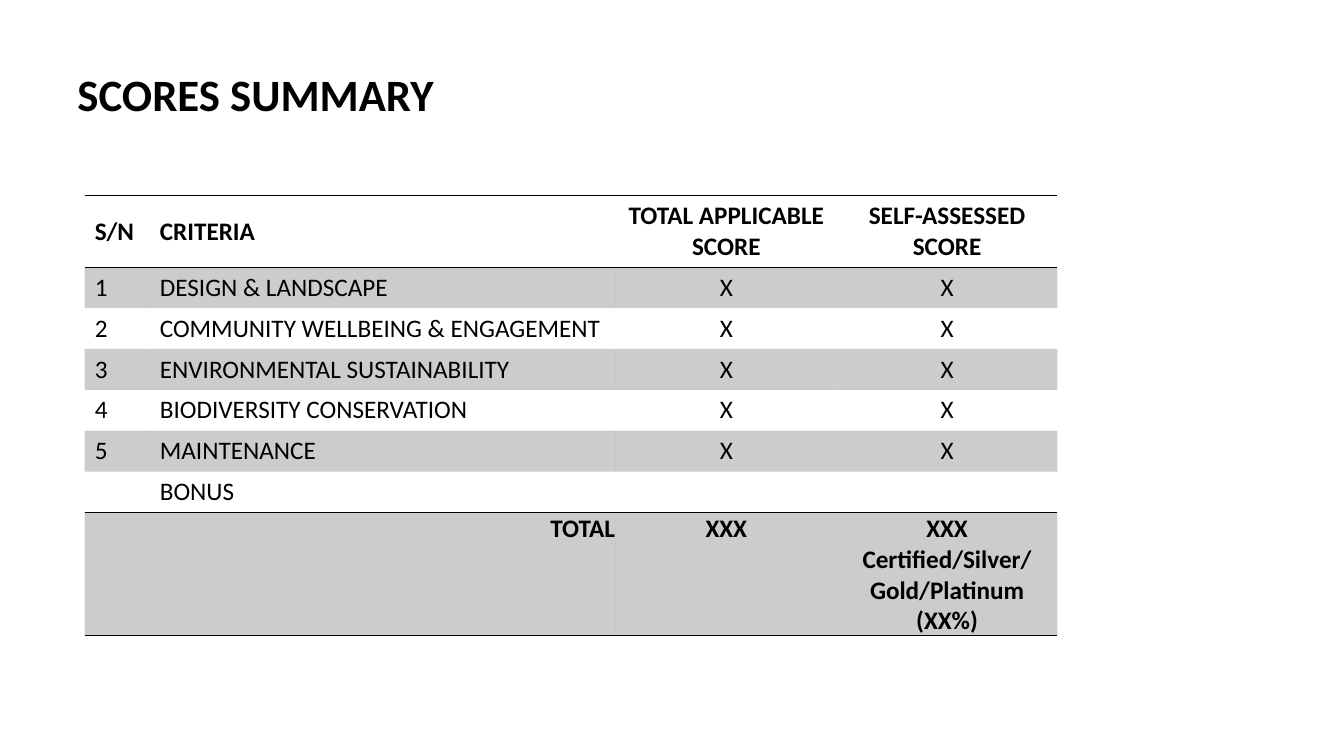
from dataclasses import dataclass

from lxml import etree
from pptx import Presentation
from pptx import util as u
from pptx.dml.color import RGBColor
from pptx.enum import text
from pptx.oxml import ns

Pt = u.Pt
LEFT, CENTER, RIGHT = text.PP_ALIGN.LEFT, text.PP_ALIGN.CENTER, text.PP_ALIGN.RIGHT
TOP, MIDDLE, BOTTOM = (text.MSO_ANCHOR.TOP, text.MSO_ANCHOR.MIDDLE,
                       text.MSO_ANCHOR.BOTTOM)


@dataclass(frozen=True)
class Theme:
    """Colours, type sizes and line widths of the slide."""
    ink: str = "000000"
    band_opacity: int = 20
    font: str = "Calibri"
    title_size: int = 32
    table_size: int = 18
    rule_width: int = 1
    plain_table: str = "{2D5ABB26-0587-4C30-8999-92F81FD0307C}"


THEME = Theme()
HEADINGS = ["S/N", "CRITERIA", "TOTAL APPLICABLE SCORE", "SELF-ASSESSED SCORE"]
CRITERIA = ["DESIGN & LANDSCAPE", "COMMUNITY WELLBEING & ENGAGEMENT",
            "ENVIRONMENTAL SUSTAINABILITY", "BIODIVERSITY CONSERVATION",
            "MAINTENANCE"]
BONUS = ["", "BONUS", "", ""]
TOTALS = ["", "TOTAL", "XXX", "XXX\nCertified/Silver/Gold/Platinum (XX%)"]
COLUMN_WIDTHS = [46.5, 333, 157.7, 157.7]
HEADER_HEIGHT, ROW_HEIGHT, TOTAL_HEIGHT = 51.2, 29.2, 88


def write(frame, content, size, bold, align=LEFT):
    """Fill a text frame, one paragraph per line of content."""
    frame.word_wrap = True
    frame.text = content
    for paragraph in frame.paragraphs:
        paragraph.alignment = align
        font = paragraph.font
        font.name, font.size, font.bold = THEME.font, Pt(size), bold
        font.color.rgb = RGBColor.from_string(THEME.ink)


def rule(cell, *sides):
    """Draw lines along the given sides (T, B) of an unfilled cell."""
    properties = cell._tc.get_or_add_tcPr()
    for side in sides:
        line = etree.SubElement(properties, ns.qn(f"a:ln{side}"),
                                w=str(Pt(THEME.rule_width)))
        fill = etree.SubElement(line, ns.qn("a:solidFill"))
        etree.SubElement(fill, ns.qn("a:srgbClr"), val=THEME.ink)


def shade(cell, banded):
    """Give a cell the translucent band, or leave it clear."""
    if not banded:
        cell.fill.background()
        return
    cell.fill.solid()
    cell.fill.fore_color.rgb = RGBColor.from_string(THEME.ink)
    band = cell._tc.tcPr.find(f"{ns.qn('a:solidFill')}/{ns.qn('a:srgbClr')}")
    etree.SubElement(band, ns.qn("a:alpha"), val=str(THEME.band_opacity * 1000))


def add_title(slide, left, top, width, height):
    """Place the slide title in its box."""
    title = slide.shapes.add_textbox(Pt(left), Pt(top), Pt(width), Pt(height))
    title.text_frame.vertical_anchor = MIDDLE
    write(title.text_frame, "SCORES SUMMARY", THEME.title_size, True)


def add_scores(slide, left, top):
    """Place the table of criteria, scores and totals."""
    scored = [[str(n), name, "X", "X"] for n, name in enumerate(CRITERIA, 1)]
    rows = [HEADINGS, *scored, BONUS, TOTALS]
    last = len(rows) - 1
    heights = [HEADER_HEIGHT, *[ROW_HEIGHT] * (last - 1), TOTAL_HEIGHT]
    frame = slide.shapes.add_table(
        len(rows), len(HEADINGS), Pt(left), Pt(top),
        Pt(sum(COLUMN_WIDTHS)), Pt(sum(heights)))
    scores = frame.table
    scores.first_row = scores.horz_banding = False
    scores._tbl.tblPr.find(ns.qn("a:tableStyleId")).text = THEME.plain_table
    for column, width in zip(scores.columns, COLUMN_WIDTHS):
        column.width = Pt(width)
    ruled = {0: "TB", last - 1: "B", last: "TB"}
    for r, (row, height) in enumerate(zip(rows, heights)):
        scores.rows[r].height = Pt(height)
        for c, content in enumerate(row):
            cell = scores.cell(r, c)
            rule(cell, *ruled.get(r, ""))
            shade(cell, r % 2 == 1)
            align = CENTER if c > 1 else LEFT
            cell.vertical_anchor = MIDDLE if r == 0 else BOTTOM
            if r == last:
                cell.vertical_anchor = MIDDLE if c == 3 else TOP
                cell.margin_left = cell.margin_right = cell.margin_top = Pt(0.72)
                cell.margin_bottom = 0
                align = RIGHT if c == 1 else align
            write(cell.text_frame, content, THEME.table_size, r in (0, last), align)


def main():
    """Build the scores summary slide and save it."""
    deck = Presentation()
    deck.slide_width, deck.slide_height = Pt(960), Pt(540)
    slide = deck.slides.add_slide(deck.slide_layouts[6])
    add_title(slide, 48.2, 21.6, 746, 90)
    add_scores(slide, 60.5, 139.7)
    deck.save("out.pptx")


if __name__ == "__main__":
    main()
